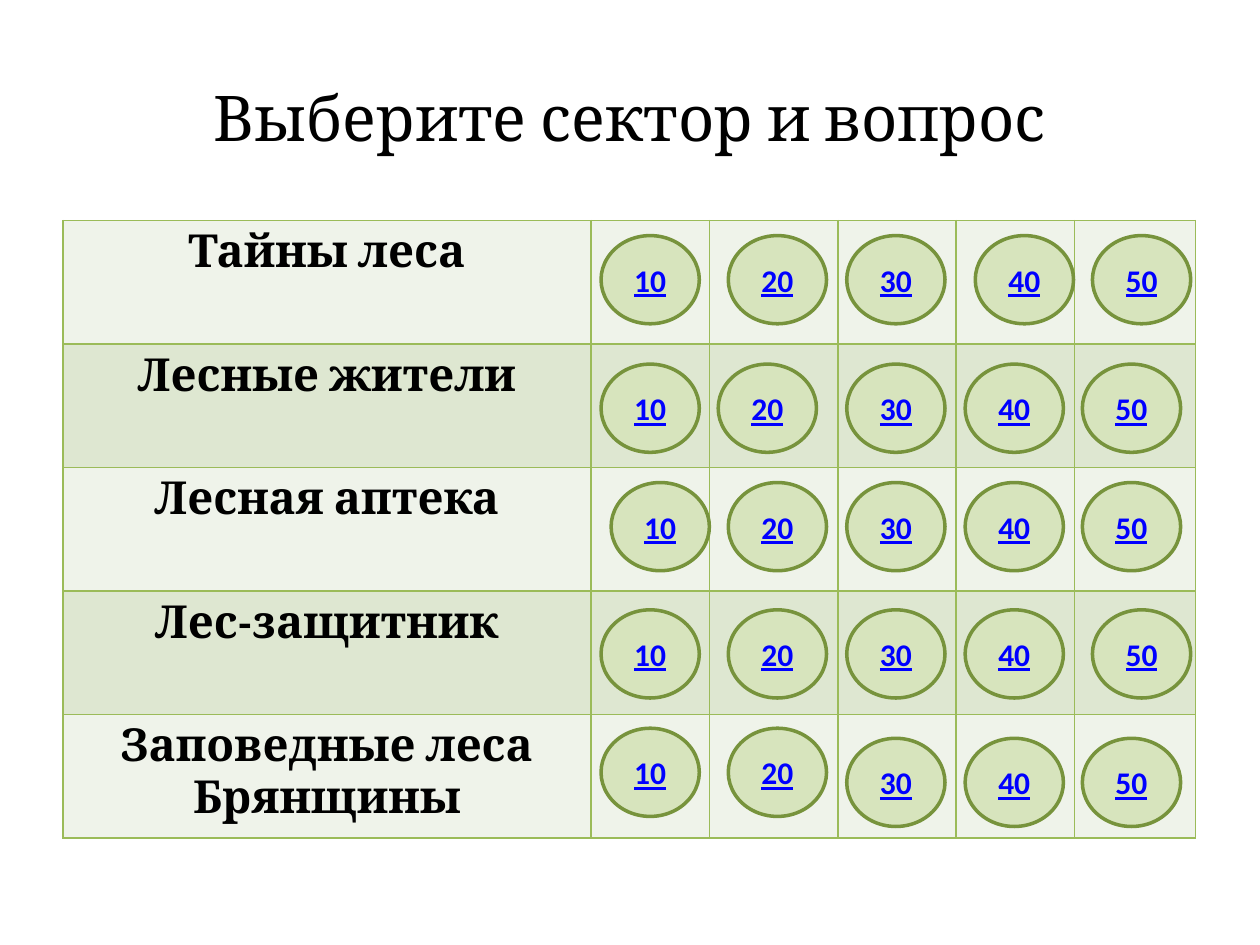
import pptx
import pptx.util
import pptx.dml.color
import pptx.enum.shapes
import pptx.enum.text
import pptx.oxml
import pptx.oxml.ns

Inches = pptx.util.Inches
Pt = pptx.util.Pt
RGBColor = pptx.dml.color.RGBColor
CENTER = pptx.enum.text.PP_ALIGN.CENTER
MIDDLE = pptx.enum.text.MSO_ANCHOR.MIDDLE

BLACK = RGBColor(0x00, 0x00, 0x00)
LINK_BLUE = RGBColor(0x00, 0x00, 0xFF)
GRID_GREEN = RGBColor(0x9B, 0xBB, 0x59)
ROW_FILLS = [RGBColor(0xEF, 0xF3, 0xEA), RGBColor(0xDE, 0xE7, 0xD1)]
BUTTON_FILL = RGBColor(0xD7, 0xE4, 0xBD)
BUTTON_LINE = RGBColor(0x77, 0x93, 0x3C)

SECTORS = [
    "Тайны леса",
    "Лесные жители",
    "Лесная аптека",
    "Лес-защитник",
    "Заповедные леса Брянщины",
]
POINTS = ["10", "20", "30", "40", "50"]

COLUMN_WIDTHS = [4.19, 0.94, 1.02, 0.94, 0.94, 0.96]
ROW_HEIGHT = 0.98

BUTTON_LEFTS = [4.77, 5.78, 6.72, 7.66, 8.59]
BUTTON_TOPS = [1.87, 2.89, 3.83, 4.84, 5.86]
# Buttons that sit off the grid: (row, column) -> (right, down)
NUDGES = {
    (0, 3): (0.08, 0),
    (0, 4): (0.08, 0),
    (1, 1): (-0.08, 0),
    (2, 0): (0.08, 0),
    (3, 4): (0.08, 0),
    (4, 0): (0, -0.08),
    (4, 1): (0, -0.08),
}


def write_text(frame, text, font_name, size, color, bold=False, underline=None):
    para = frame.paragraphs[0]
    para.text = text
    para.alignment = CENTER
    font = para.font
    font.name = font_name
    font.size = Pt(size)
    font.color.rgb = color
    font.bold = bold
    font.underline = underline


def add_title(page, text):
    box = page.shapes.add_textbox(Inches(0.5), Inches(0.3), Inches(9), Inches(1.25))
    box.text_frame.word_wrap = True
    box.text_frame.vertical_anchor = MIDDLE
    write_text(box.text_frame, text, "Cambria", 36, BLACK)


def set_borders(cell):
    properties = cell._tc.get_or_add_tcPr()
    for position, side in enumerate(["lnL", "lnR", "lnT", "lnB"]):
        border = pptx.oxml.parse_xml(
            f'<a:{side} {pptx.oxml.ns.nsdecls("a")} w="{Pt(1)}"><a:solidFill>'
            f'<a:srgbClr val="{GRID_GREEN}"/></a:solidFill></a:{side}>'
        )
        properties.insert(position, border)


def add_sector_table(page):
    table = page.shapes.add_table(
        len(SECTORS), len(COLUMN_WIDTHS), Inches(0.5), Inches(1.75),
        Inches(sum(COLUMN_WIDTHS)), Inches(ROW_HEIGHT * len(SECTORS)),
    ).table
    table.first_row = False
    table.horz_banding = False
    for column, width in zip(table.columns, COLUMN_WIDTHS):
        column.width = Inches(width)
    for number, (row, sector) in enumerate(zip(table.rows, SECTORS)):
        row.height = Inches(ROW_HEIGHT)
        for cell in row.cells:
            cell.fill.solid()
            cell.fill.fore_color.rgb = ROW_FILLS[number % 2]
            set_borders(cell)
        write_text(row.cells[0].text_frame, sector, "Cambria", 26, BLACK, bold=True)


def add_button(page, left, top, points):
    button = page.shapes.add_shape(
        pptx.enum.shapes.MSO_SHAPE.OVAL,
        Inches(left), Inches(top), Inches(0.78), Inches(0.7),
    )
    button.shadow.inherit = False
    button.fill.solid()
    button.fill.fore_color.rgb = BUTTON_FILL
    button.line.color.rgb = BUTTON_LINE
    button.line.width = Pt(2)
    button.text_frame.vertical_anchor = MIDDLE
    write_text(button.text_frame, points, "Calibri", 18, LINK_BLUE,
               bold=True, underline=True)


def main():
    deck = pptx.Presentation()
    deck.slide_width = Inches(10)
    deck.slide_height = Inches(7.5)
    page = deck.slides.add_slide(deck.slide_layouts[6])

    add_title(page, "Выберите сектор и вопрос")
    add_sector_table(page)

    # One button per sector and question value
    for column, (left, points) in enumerate(zip(BUTTON_LEFTS, POINTS)):
        for row, top in enumerate(BUTTON_TOPS):
            right, down = NUDGES.get((row, column), (0, 0))
            add_button(page, left + right, top + down, points)

    deck.save("out.pptx")


if __name__ == "__main__":
    main()
